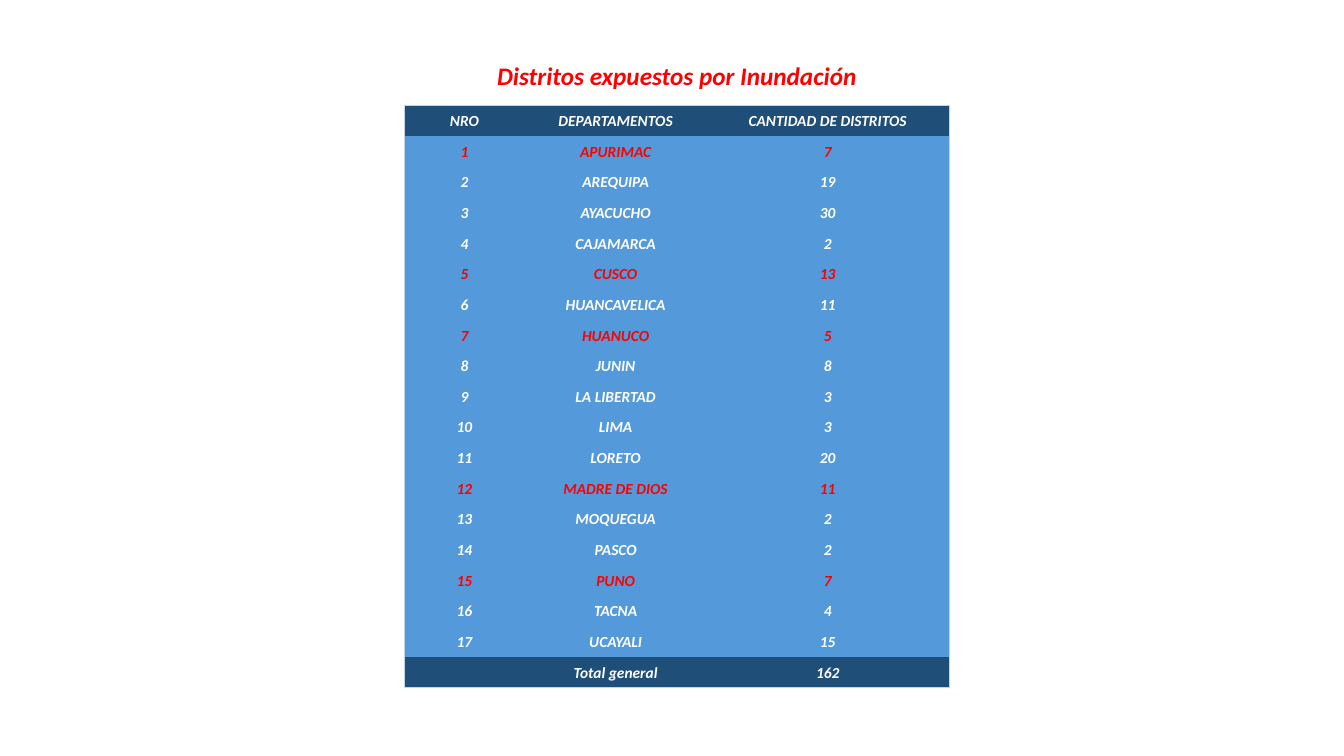
from lxml import etree
from pptx import Presentation
from pptx.dml.color import RGBColor
from pptx.enum.text import MSO_ANCHOR, MSO_AUTO_SIZE, PP_ALIGN
from pptx.oxml.ns import qn
from pptx.util import Cm, Pt

CENTER = PP_ALIGN.CENTER
MIDDLE = MSO_ANCHOR.MIDDLE
FIT_SHAPE = MSO_AUTO_SIZE.SHAPE_TO_FIT_TEXT

RED = RGBColor(0xFF, 0x00, 0x00)
WHITE = RGBColor(0xFF, 0xFF, 0xFF)
NAVY = RGBColor(0x1F, 0x4E, 0x79)
BLUE = RGBColor(0x54, 0x99, 0xDA)
PALE_BLUE = RGBColor(0xC4, 0xD5, 0xEB)

FONT = "Calibri"
CELL_SIZE = 11
NO_STYLE = "{2D5ABB26-0587-4C30-8999-92F81FD0307C}"
COLUMN_WIDTHS = [Cm(3.05), Cm(4.57), Cm(6.12)]
TABLE_HEIGHT = Cm(14.68)

HEADER = ("NRO", "DEPARTAMENTOS", "CANTIDAD DE DISTRITOS")
DISTRICTS = [
    ("APURIMAC", 7),
    ("AREQUIPA", 19),
    ("AYACUCHO", 30),
    ("CAJAMARCA", 2),
    ("CUSCO", 13),
    ("HUANCAVELICA", 11),
    ("HUANUCO", 5),
    ("JUNIN", 8),
    ("LA LIBERTAD", 3),
    ("LIMA", 3),
    ("LORETO", 20),
    ("MADRE DE DIOS", 11),
    ("MOQUEGUA", 2),
    ("PASCO", 2),
    ("PUNO", 7),
    ("TACNA", 4),
    ("UCAYALI", 15),
]
HIGHLIGHTED = {"APURIMAC", "CUSCO", "HUANUCO", "MADRE DE DIOS", "PUNO"}


def write_text(frame, text, size, color):
    para = frame.paragraphs[0]
    para.alignment = CENTER
    if not text:
        etree.SubElement(para._p, qn("a:endParaRPr"), sz=str(size * 100))
        return
    span = para.add_run()
    span.text = text
    font = span.font
    font.name = FONT
    font.size = Pt(size)
    font.bold = True
    font.italic = True
    font.color.rgb = color


def add_title(page, text):
    box = page.shapes.add_textbox(Cm(12.22), Cm(1.4), Cm(9.68), Cm(1.02))
    frame = box.text_frame
    frame.word_wrap = False
    frame.auto_size = FIT_SHAPE
    write_text(frame, text, 18, RED)


def add_border(cell, side):
    properties = cell._tc.get_or_add_tcPr()
    line = etree.SubElement(properties, qn(f"a:ln{side}"), w=str(Pt(0.5)))
    fill = etree.SubElement(line, qn("a:solidFill"))
    etree.SubElement(fill, qn("a:srgbClr"), val=str(PALE_BLUE))


def format_cell(cell, text, text_color, fill_color, sides):
    cell.vertical_anchor = MIDDLE
    cell.margin_left = cell.margin_right = cell.margin_top = Cm(0.02)
    cell.margin_bottom = 0
    for side in sides:
        add_border(cell, side)
    cell.fill.solid()
    cell.fill.fore_color.rgb = fill_color
    write_text(cell.text_frame, text, CELL_SIZE, text_color)


def add_district_table(page):
    total = sum(count for name, count in DISTRICTS)
    body = [(str(number), name, str(count))
            for number, (name, count) in enumerate(DISTRICTS, 1)]
    rows = [HEADER, *body, ("", "Total general", str(total))]
    last_row, last_column = len(rows) - 1, len(HEADER) - 1

    holder = page.shapes.add_table(len(rows), len(HEADER), Cm(10.18), Cm(2.66),
                                   sum(COLUMN_WIDTHS), TABLE_HEIGHT)
    table = holder.table
    table.first_row = False
    table.horz_banding = False
    table._tbl.tblPr.find(qn("a:tableStyleId")).text = NO_STYLE
    for column, width in zip(table.columns, COLUMN_WIDTHS):
        column.width = width

    for row_index, values in enumerate(rows):
        table.rows[row_index].height = TABLE_HEIGHT // len(rows)
        text_color = RED if values[1] in HIGHLIGHTED else WHITE
        fill_color = NAVY if row_index in (0, last_row) else BLUE
        for column_index, text in enumerate(values):
            edges = [("L", column_index == 0), ("R", column_index == last_column),
                     ("T", row_index == 0), ("B", row_index == last_row)]
            sides = [side for side, is_outer in edges if is_outer]
            format_cell(table.cell(row_index, column_index), text,
                        text_color, fill_color, sides)


def main():
    deck = Presentation()
    deck.slide_width = Cm(33.87)
    deck.slide_height = Cm(19.05)
    page = deck.slides.add_slide(deck.slide_layouts[6])
    add_title(page, "Distritos expuestos por Inundación")
    add_district_table(page)
    deck.save("out.pptx")


if __name__ == "__main__":
    main()
